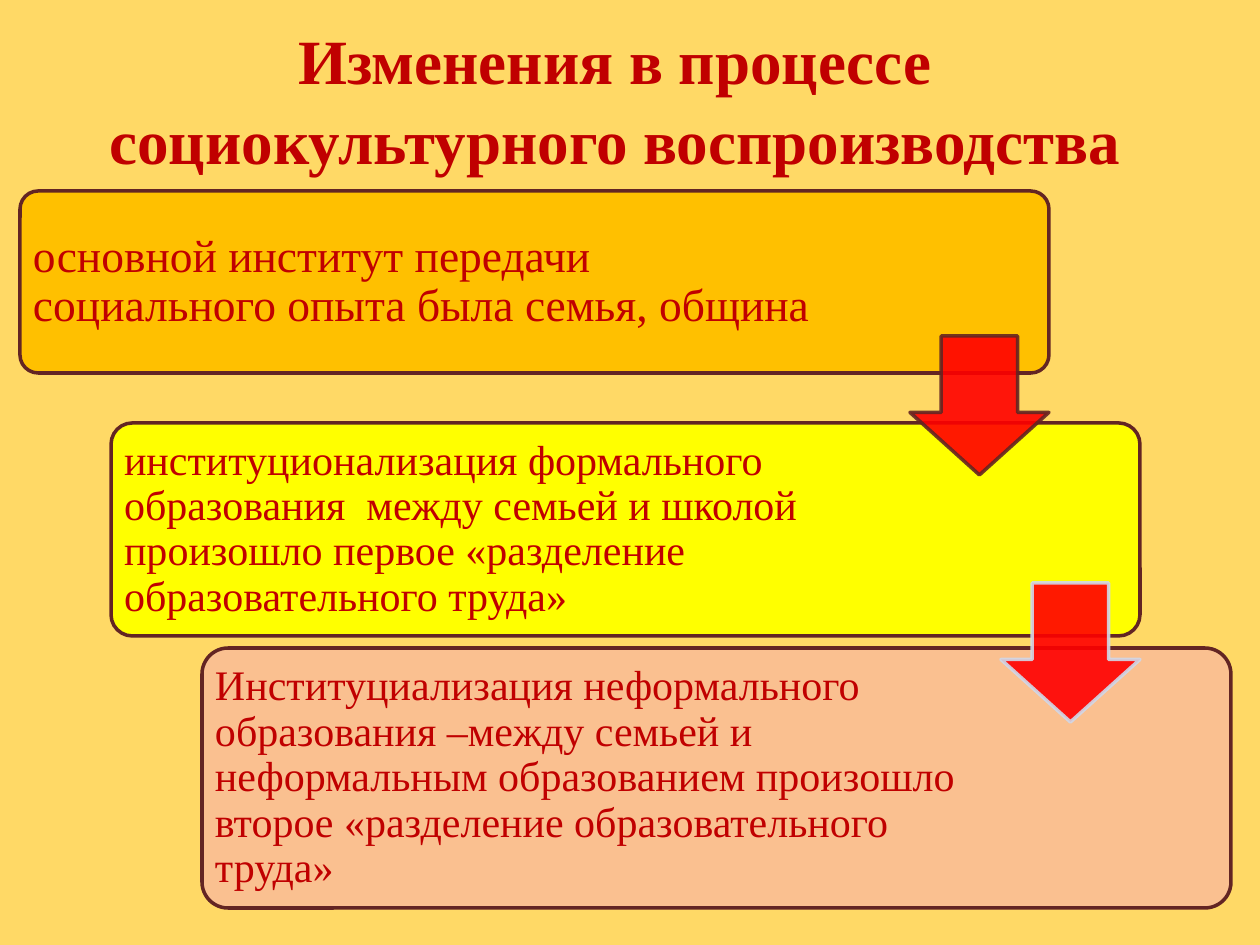
from dataclasses import dataclass

from lxml.etree import SubElement
from pptx import Presentation
from pptx.dml.color import RGBColor
from pptx.enum.shapes import MSO_SHAPE as Shape
from pptx.enum.text import MSO_ANCHOR as Anchor, MSO_AUTO_SIZE as AutoSize, PP_ALIGN as Align
from pptx.oxml.ns import qn
from pptx.util import Emu, Pt

PX_PER_INCH = 126


@dataclass(frozen=True)
class Theme:
    font: str = "Times New Roman"
    background: str = "FFD966"
    text: str = "C00000"
    outline: str = "632523"
    pale_outline: str = "D0D8E8"
    arrow: str = "FF0000"
    cards: tuple = ("FFC000", "FFFF00", "FAC090")
    title_size: int = 36
    lead_size: int = 26
    body_size: int = 24
    line_width: int = 2
    arrow_opacity: int = 90


THEME = Theme()

# Steps: top, height, text width, type size, text
STEPS = (
    (191, 182, 813, THEME.lead_size,
     "основной институт передачи социального опыта была семья, община"),
    (423, 213, 800, THEME.body_size,
     "институционализация формального образования  между семьей и школой "
     "произошло первое «разделение образовательного труда»"),
    (648, 260, 800, THEME.body_size,
     "Институциализация неформального образования –между семьей и "
     "неформальным образованием произошло второе «разделение "
     "образовательного труда»"),
)
CARD_LEFT, CARD_WIDTH, STEP_SHIFT = 20, 1029, 91
ARROW_SIZE = 139
# Arrows: top, outline colour
ARROWS = ((336, THEME.outline), (583, THEME.pale_outline))


def px(length):
    return Emu(round(length * 914400 / PX_PER_INCH))


def color(value):
    return RGBColor.from_string(value)


def write(frame, text, size, bold=False, align=Align.LEFT, spacing=1.0):
    frame.word_wrap = True
    frame.auto_size = AutoSize.NONE
    frame.vertical_anchor = Anchor.MIDDLE
    paragraph = frame.paragraphs[0]
    paragraph.alignment = align
    paragraph.line_spacing = spacing
    run = paragraph.add_run()
    run.text = text
    run.font.name = THEME.font
    run.font.size = Pt(size)
    run.font.bold = bold
    run.font.color.rgb = color(THEME.text)


def set_opacity(shape, percent):
    """Apply the same opacity to the fill and the outline."""
    for node in shape._element.spPr.iter(qn("a:srgbClr")):
        SubElement(node, qn("a:alpha"), val=str(percent * 1000))


def add_block(slide, kind, box, fill, outline, adjustments):
    shape = slide.shapes.add_shape(kind, *map(px, box))
    shape.shadow.inherit = False
    shape.fill.solid()
    shape.fill.fore_color.rgb = color(fill)
    shape.line.color.rgb = color(outline)
    shape.line.width = Pt(THEME.line_width)
    for index, value in enumerate(adjustments):
        shape.adjustments[index] = value
    return shape


def add_title(slide, text):
    title = slide.shapes.title
    title.left, title.top, title.width, title.height = map(px, (29, 29, 1172, 137))
    write(title.text_frame, text, THEME.title_size, True, Align.CENTER, 1.05)


def add_step(slide, index, top, height, text_width, size, text):
    left = CARD_LEFT + index * STEP_SHIFT
    add_block(slide, Shape.ROUNDED_RECTANGLE, (left, top, CARD_WIDTH, height),
              THEME.cards[index], THEME.outline, (0.1,))
    label = slide.shapes.add_textbox(*map(px, (left, top, text_width, height)))
    frame = label.text_frame
    frame.margin_left = frame.margin_right = px(13)
    frame.margin_top = frame.margin_bottom = px(13)
    write(frame, text, size, spacing=0.9)


def add_arrow(slide, index, top, outline):
    # Each arrow ends flush with the right edge of its card
    left = CARD_LEFT + index * STEP_SHIFT + CARD_WIDTH - ARROW_SIZE
    arrow = add_block(slide, Shape.DOWN_ARROW, (left, top, ARROW_SIZE, ARROW_SIZE),
                      THEME.arrow, outline, (0.55, 0.45))
    set_opacity(arrow, THEME.arrow_opacity)


def main():
    presentation = Presentation()
    presentation.slide_width, presentation.slide_height = px(1260), px(945)
    slide = presentation.slides.add_slide(presentation.slide_layouts[5])
    slide.background.fill.solid()
    slide.background.fill.fore_color.rgb = color(THEME.background)

    # Title
    add_title(slide, "Изменения в процессе социокультурного воспроизводства")
    # Staircase of cards, then the arrows over them
    for index, step in enumerate(STEPS):
        add_step(slide, index, *step)
    for index, arrow in enumerate(ARROWS):
        add_arrow(slide, index, *arrow)

    presentation.save("out.pptx")


if __name__ == "__main__":
    main()
